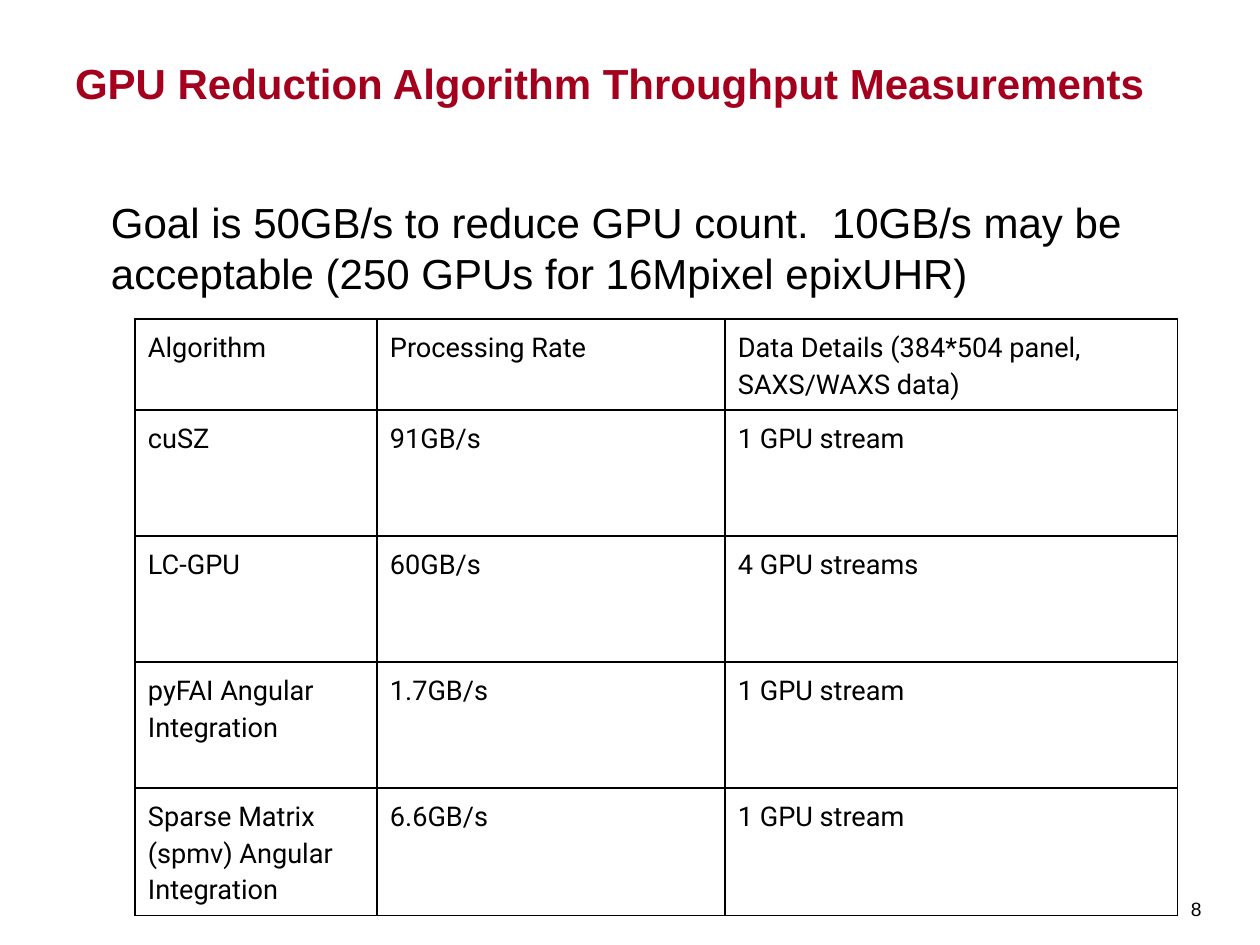
from dataclasses import dataclass

from lxml.etree import SubElement
from pptx import Presentation
from pptx.dml.color import RGBColor
from pptx.enum.text import MSO_ANCHOR, MSO_AUTO_SIZE, PP_ALIGN
from pptx.oxml.ns import qn
from pptx.util import Emu, Pt

TITLE = "GPU Reduction Algorithm Throughput Measurements"
GOAL = ("Goal is 50GB/s to reduce GPU count.  10GB/s may be acceptable "
        "(250 GPUs for 16Mpixel epixUHR)")
NUMBER = "8"
ROWS = [
    ("Algorithm", "Processing Rate", "Data Details (384*504 panel, SAXS/WAXS data)"),
    ("cuSZ", "91GB/s", "1 GPU stream"),
    ("LC-GPU", "60GB/s", "4 GPU streams"),
    ("pyFAI Angular Integration", "1.7GB/s", "1 GPU stream"),
    ("Sparse Matrix (spmv) Angular Integration", "6.6GB/s", "1 GPU stream"),
]
WIDTHS = (242, 348, 453)
HEAD, BODY = 91, 126


@dataclass(frozen=True)
class Theme:
    red: str = "A4001D"
    black: str = "000000"
    sans: str = "Arial"
    grid: str = "Roboto"
    large: float = 24
    cell: float = 15.5
    small: float = 11
    line: float = 0.75


THEME = Theme()


def px(n):
    return Emu(round(n * 914400 / 126))


def style(para, face, size, color, bold=False):
    font = para.font
    font.name, font.size, font.bold = face, Pt(size), bold
    font.color.rgb = RGBColor.from_string(color)


def inset(box, left, top, right, bottom):
    box.margin_left, box.margin_top = px(left), px(top)
    box.margin_right, box.margin_bottom = px(right), px(bottom)


def place(shape, left, top, width, height):
    shape.left, shape.top = px(left), px(top)
    shape.width, shape.height = px(width), px(height)


def write(shape, text, size, color, pads, anchor, bold=False):
    frame = shape.text_frame
    frame.text = text
    frame.word_wrap = True
    frame.auto_size = MSO_AUTO_SIZE.NONE
    frame.vertical_anchor = anchor
    inset(frame, *pads)
    para = frame.paragraphs[0]
    para.alignment = PP_ALIGN.LEFT
    style(para, THEME.sans, size, color, bold)


def border(cell):
    """Draw all four edges; they must come before the cell's fill."""
    props = cell._tc.get_or_add_tcPr()
    for side in ("lnL", "lnR", "lnT", "lnB"):
        edge = SubElement(props, qn(f"a:{side}"), w=str(Pt(THEME.line)))
        fill = SubElement(edge, qn("a:solidFill"))
        SubElement(fill, qn("a:srgbClr"), val=THEME.black)


def add_rates(slide):
    heights = [HEAD] + [BODY] * (len(ROWS) - 1)
    table = slide.shapes.add_table(
        len(ROWS), len(WIDTHS), px(135), px(319),
        px(sum(WIDTHS)), px(sum(heights))).table
    table.first_row = table.horz_banding = False
    for col, width in zip(table.columns, WIDTHS):
        col.width = px(width)
    for row, height, texts in zip(table.rows, heights, ROWS):
        row.height = px(height)
        for cell, text in zip(row.cells, texts):
            cell.text = text
            inset(cell, 13, 9, 13, 9)
            border(cell)
            cell.fill.background()
            para = cell.text_frame.paragraphs[0]
            para.line_spacing = 1.15
            style(para, THEME.grid, THEME.cell, THEME.black)


def main():
    deck = Presentation()
    deck.slide_width, deck.slide_height = px(1260), px(945)
    slide = deck.slides.add_slide(deck.slide_layouts[5])

    title = slide.shapes.title
    place(title, 62, 18, 1116, 103)
    write(title, TITLE, THEME.large, THEME.red, (13,) * 4, MSO_ANCHOR.BOTTOM, True)

    number = slide.shapes.add_textbox(px(1181), px(871), px(44), px(74))
    write(number, NUMBER, THEME.small, THEME.black, (10, 8, 10, 6), MSO_ANCHOR.MIDDLE)

    add_rates(slide)

    goal = slide.shapes.add_textbox(px(98), px(184), px(1082), px(127))
    write(goal, GOAL, THEME.large, THEME.black, (13,) * 4, MSO_ANCHOR.TOP)
    goal.text_frame.auto_size = MSO_AUTO_SIZE.SHAPE_TO_FIT_TEXT

    deck.save("out.pptx")


if __name__ == "__main__":
    main()
